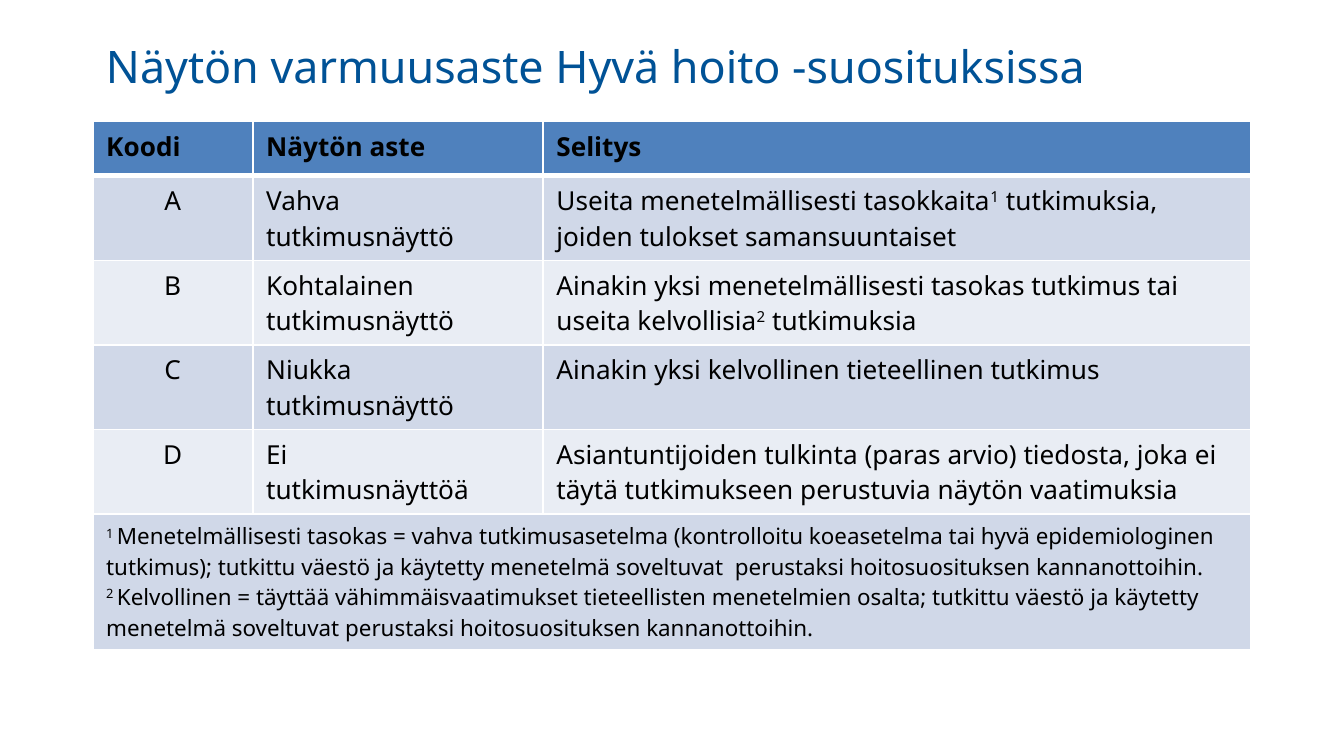
from lxml.etree import SubElement as Sub
from pptx import Presentation
from pptx.dml.color import RGBColor as RGB
from pptx.enum.text import MSO_ANCHOR as Anchor, PP_ALIGN as Align
from pptx.oxml.ns import qn
from pptx.util import Pt

FONT = "Noto Sans"
HUES = {
    "title": "005296",
    "text": "000000",
    "head": "4F81BD",
    "odd": "D0D8E8",
    "even": "E9EDF4",
    "rule": "FFFFFF",
}
HEAD = ["Koodi", "Näytön aste", "Selitys"]
GRADES = [
    ["A", "Vahva\ntutkimusnäyttö",
     "Useita menetelmällisesti tasokkaita^1^ tutkimuksia, "
     "joiden tulokset samansuuntaiset"],
    ["B", "Kohtalainen\ntutkimusnäyttö",
     "Ainakin yksi menetelmällisesti tasokas tutkimus tai "
     "useita kelvollisia^2^ tutkimuksia"],
    ["C", "Niukka\ntutkimusnäyttö",
     "Ainakin yksi kelvollinen tieteellinen tutkimus"],
    ["D", "Ei\ntutkimusnäyttöä",
     "Asiantuntijoiden tulkinta (paras arvio) tiedosta, joka ei "
     "täytä tutkimukseen perustuvia näytön vaatimuksia"],
]
NOTES = (
    "^1 ^Menetelmällisesti tasokas = vahva tutkimusasetelma (kontrolloitu "
    "koeasetelma tai hyvä epidemiologinen tutkimus); tutkittu väestö ja "
    "käytetty menetelmä soveltuvat  perustaksi hoitosuosituksen "
    "kannanottoihin.\n"
    "^2 ^Kelvollinen = täyttää vähimmäisvaatimukset tieteellisten "
    "menetelmien osalta; tutkittu väestö ja käytetty menetelmä soveltuvat "
    "perustaksi hoitosuosituksen kannanottoihin."
)


def write(frame, text, size, hue="text", bold=False, align=Align.LEFT):
    """Write lines as paragraphs, raising the parts between carets."""
    for i, line in enumerate(text.split("\n")):
        para = frame.add_paragraph() if i else frame.paragraphs[0]
        para.alignment = align
        for j, part in enumerate(line.split("^")):
            if not part:
                continue
            run = para.add_run()
            run.text = part
            font = run.font
            font.name, font.size, font.bold = FONT, Pt(size), bold
            font.color.rgb = RGB.from_string(HUES[hue])
            if j % 2:
                run._r.get_or_add_rPr().set("baseline", "30000")


def paint(cell, hue, top=1, base=1):
    """Give a cell its white rules and its fill."""
    props = cell._tc.get_or_add_tcPr()
    for side, width in zip("LRTB", (1, 1, top, base)):
        line = Sub(props, qn(f"a:ln{side}"), w=str(Pt(width)))
        Sub(Sub(line, qn("a:solidFill")), qn("a:srgbClr"), val=HUES["rule"])
    cell.fill.solid()
    cell.fill.fore_color.rgb = RGB.from_string(HUES[hue])


def add_title(slide, x, y, w, h):
    """Place the slide title in its box."""
    frame = slide.shapes.add_textbox(Pt(x), Pt(y), Pt(w), Pt(h)).text_frame
    frame.word_wrap = True
    frame.vertical_anchor = Anchor.MIDDLE
    write(frame, "Näytön varmuusaste Hyvä hoito -suosituksissa", 24, "title")


def add_grades(slide, x, y, w, h):
    """Place the table of evidence grades with its notes row."""
    rows = [HEAD, *GRADES, [NOTES, "", ""]]
    last = len(rows) - 1
    table = slide.shapes.add_table(
        len(rows), len(HEAD), Pt(x), Pt(y), Pt(w), Pt(h)).table
    code, grade = 85.7, 155.5
    for col, width in zip(table.columns, (code, grade, w - code - grade)):
        col.width = Pt(width)
    head, foot = 29.2, 72.5
    body = (h - head - foot) / len(GRADES)
    for row, high in zip(table.rows, [head] + [body] * len(GRADES) + [foot]):
        row.height = Pt(high)
    for r, row in enumerate(rows):
        hue = "head" if r == 0 else "odd" if r % 2 else "even"
        for c, text in enumerate(row):
            cell = table.cell(r, c)
            paint(cell, hue, 3 if r == 1 else 1, 3 if r == 0 else 1)
            mid = c == 0 and 0 < r < last
            write(cell.text_frame, text, 12 if r == last else 14,
                  bold=r == 0, align=Align.CENTER if mid else Align.LEFT)
    table.cell(last, 0).merge(table.cell(last, len(HEAD) - 1))


def main():
    """Build the slide and save it."""
    deck = Presentation()
    deck.slide_width, deck.slide_height = Pt(720), Pt(405)
    slide = deck.slides.add_slide(deck.slide_layouts[6])
    left, wide = 49.7, 620.6
    add_title(slide, left, 17.3, wide, 36)
    add_grades(slide, left, 65, wide, 283)
    deck.save("out.pptx")


if __name__ == "__main__":
    main()
